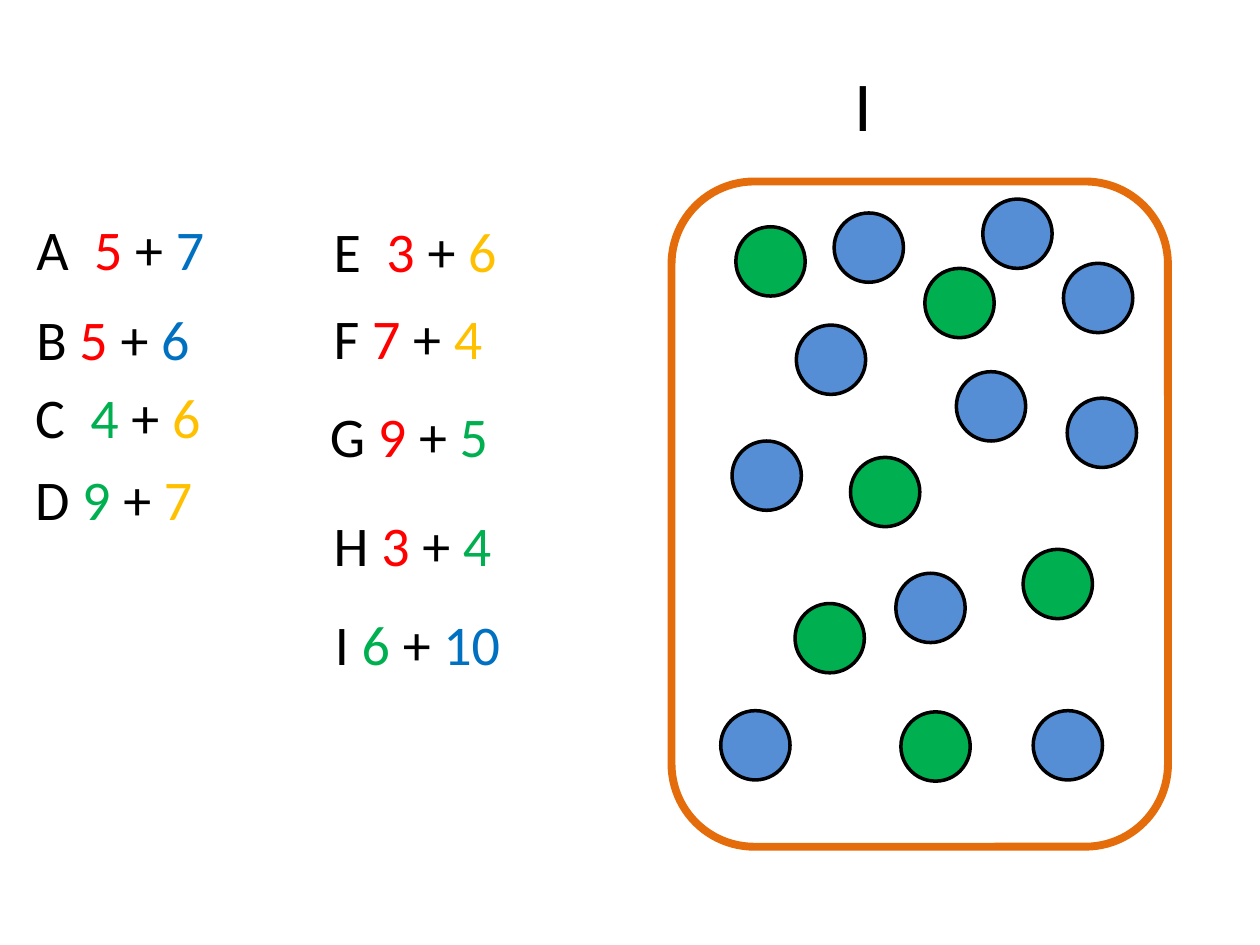
from pptx import Presentation
from pptx.dml.color import RGBColor
from pptx.enum.shapes import MSO_SHAPE
from pptx.util import Inches, Pt

COLORS = {
    "black": "000000", "white": "FFFFFF", "red": "FF0000", "blue": "0070C0",
    "green": "00B050", "yellow": "FFC000", "orange": "E46C0A", "counter blue": "558ED5",
}
SUMS = [
    ("A  ", "5", "red", "7", "blue", 0.19, 1.65, 1.55),
    ("B ", "5", "red", "6", "blue", 0.19, 2.37, 1.43),
    ("C  ", "4", "green", "6", "yellow", 0.18, 2.99, 1.92),
    ("D ", "9", "green", "7", "yellow", 0.18, 3.64, 1.46),
    ("E  ", "3", "red", "6", "yellow", 2.55, 1.67, 1.51),
    ("F ", "7", "red", "4", "yellow", 2.55, 2.36, 1.43),
    ("G ", "9", "red", "5", "green", 2.52, 3.14, 1.47),
    ("H ", "3", "red", "4", "green", 2.55, 4, 1.47),
    ("I ", "6", "green", "10", "blue", 2.56, 4.79, 1.53),
]
COUNTERS = {
    "green": [(6.75, 3.63), (6.31, 4.79), (5.84, 1.8), (7.34, 2.13), (7.15, 5.65), (8.12, 4.36)],
    "counter blue": [
        (6.62, 1.69), (7.8, 1.58), (8.44, 2.09), (7.59, 2.95), (8.47, 3.16),
        (7.11, 4.55), (8.2, 5.64), (6.32, 2.58), (5.81, 3.5), (5.72, 5.64),
    ],
}
COUNTER_SIZE = 0.55


def color(name):
    return RGBColor.from_string(COLORS[name])


def add_text(page, spans, *, left, top, width, height=0.64, size=32, wrap=False):
    box = page.shapes.add_textbox(Inches(left), Inches(top), Inches(width), Inches(height))
    box.text_frame.word_wrap = wrap
    para = box.text_frame.paragraphs[0]
    for text, tint in spans:
        span = para.add_run()
        span.text = text
        span.font.name = "Calibri"
        span.font.size = Pt(size)
        span.font.color.rgb = color(tint)


def add_outlined(page, kind, left, top, width, height, fill, line, weight):
    shape = page.shapes.add_shape(kind, Inches(left), Inches(top), Inches(width), Inches(height))
    shape.shadow.inherit = False
    shape.fill.solid()
    shape.fill.fore_color.rgb = color(fill)
    shape.line.color.rgb = color(line)
    shape.line.width = Pt(weight)


def main():
    deck = Presentation()
    deck.slide_width, deck.slide_height = Inches(10), Inches(7.5)
    page = deck.slides.add_slide(deck.slide_layouts[6])

    for label, first, first_tint, second, second_tint, left, top, width in SUMS:
        spans = [(label, "black"), (first, first_tint), (" + ", "black"), (second, second_tint)]
        add_text(page, spans, left=left, top=top, width=width)
    add_text(page, [("I", "black")], left=6.68, top=0.44, width=0.58, height=0.77, size=40, wrap=True)

    add_outlined(page, MSO_SHAPE.ROUNDED_RECTANGLE, 5.33, 1.44, 3.94, 5.28, "white", "orange", 4.5)
    for fill, places in COUNTERS.items():
        for left, top in places:
            add_outlined(page, MSO_SHAPE.OVAL, left, top, COUNTER_SIZE, COUNTER_SIZE, fill, "black", 2)

    deck.save("out.pptx")


if __name__ == "__main__":
    main()
